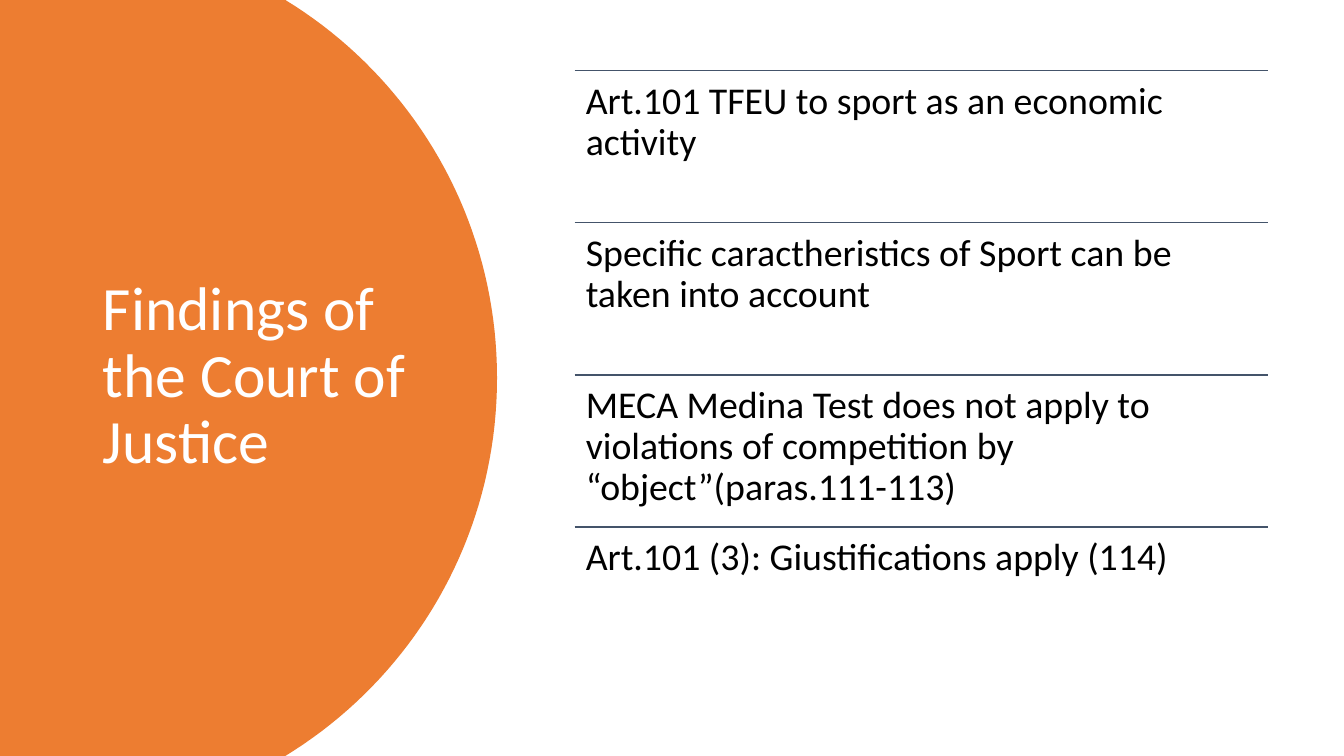
from dataclasses import dataclass

from lxml import etree
from pptx import Presentation
from pptx.dml.color import RGBColor
from pptx.enum.shapes import MSO_CONNECTOR
from pptx.enum.text import MSO_ANCHOR, MSO_AUTO_SIZE, PP_ALIGN
from pptx.oxml.ns import qn
from pptx.util import Inches, Pt

STRAIGHT = MSO_CONNECTOR.STRAIGHT
TOP, MIDDLE = MSO_ANCHOR.TOP, MSO_ANCHOR.MIDDLE
LEFT = PP_ALIGN.LEFT
NO_AUTOFIT = MSO_AUTO_SIZE.NONE


@dataclass(frozen=True)
class Theme:
    font: str = "Calibri"
    panel: RGBColor = RGBColor(0xED, 0x7D, 0x31)
    rule: RGBColor = RGBColor(0x44, 0x54, 0x6A)
    title_text: RGBColor = RGBColor(0xFF, 0xFF, 0xFF)
    body_text: RGBColor = RGBColor(0, 0, 0)
    title_size: Pt = Pt(44)
    body_size: Pt = Pt(27)
    rule_width: Pt = Pt(1)


THEME = Theme()
SLIDE_WIDTH, SLIDE_HEIGHT = 13.33, 7.5
MIDDLE_Y = SLIDE_HEIGHT / 2
CURVE_STEPS = 40

FINDINGS = [
    "Art.101 TFEU to sport as an economic activity",
    "Specific caractheristics of Sport can be taken into account",
    "MECA Medina Test does not apply to violations of competition by “object”(paras.111-113)",
    "Art.101 (3): Giustifications apply (114)",
]
LIST_LEFT, LIST_TOP, LIST_WIDTH, ROW_HEIGHT = 5.7, 0.7, 6.88, 1.51
ROW_INSET = Inches(0.11)


def write_text(shape, text, size, color, anchor):
    frame = shape.text_frame
    frame.text = text
    frame.word_wrap = True
    frame.auto_size = NO_AUTOFIT
    frame.vertical_anchor = anchor
    paragraph = frame.paragraphs[0]
    paragraph.alignment = LEFT
    paragraph.line_spacing = 0.9
    font = paragraph.runs[0].font
    font.name, font.size = THEME.font, size
    font.color.rgb = color


def cubic_point(start, control_1, control_2, end, t):
    """Return the point of a cubic Bézier curve at parameter t."""
    u = 1 - t
    return tuple(
        u**3 * a + 3 * u**2 * t * b + 3 * u * t**2 * c + t**3 * d
        for a, b, c, d in zip(start, control_1, control_2, end)
    )


presentation = Presentation()
presentation.slide_width = Inches(SLIDE_WIDTH)
presentation.slide_height = Inches(SLIDE_HEIGHT)
slide = presentation.slides.add_slide(presentation.slide_layouts.get_by_name("Title Only"))

# Orange panel: the lower half of its curved edge mirrors the upper half
upper_edge = [
    cubic_point((2.83, 0), (4.09, 0.77), (4.93, 2.16), (4.93, MIDDLE_Y), step / CURVE_STEPS)
    for step in range(CURVE_STEPS + 1)
]
lower_edge = [(x, SLIDE_HEIGHT - y) for x, y in reversed(upper_edge[:-1])]
outline = upper_edge + lower_edge + [(0, SLIDE_HEIGHT)]
builder = slide.shapes.build_freeform(0, 0, scale=1)
builder.add_line_segments([(Inches(x), Inches(y)) for x, y in outline], close=True)
panel = builder.convert_to_shape()
panel.shadow.inherit = False
panel.fill.solid()
panel.fill.fore_color.rgb = THEME.panel
panel.line.fill.background()

# Title, in front of the panel
title = slide.shapes.title
title.element.addprevious(panel.element)
title.left, title.top = Inches(0.92), Inches(0.7)
title.width, title.height = Inches(3.23), Inches(6.09)
write_text(title, "Findings of the Court of Justice", THEME.title_size, THEME.title_text, MIDDLE)

# Findings, each under a rule
for index, finding in enumerate(FINDINGS):
    left, width = Inches(LIST_LEFT), Inches(LIST_WIDTH)
    top = Inches(LIST_TOP + index * ROW_HEIGHT)

    rule = slide.shapes.add_connector(STRAIGHT, left, top, left + width, top)
    rule.line.color.rgb = THEME.rule
    rule.line.width = THEME.rule_width
    etree.SubElement(rule.element.spPr, qn("a:effectLst"))

    row = slide.shapes.add_textbox(left, top, width, Inches(ROW_HEIGHT))
    write_text(row, finding, THEME.body_size, THEME.body_text, TOP)
    frame = row.text_frame
    frame.margin_left = frame.margin_right = ROW_INSET
    frame.margin_top = frame.margin_bottom = ROW_INSET

presentation.save("out.pptx")
